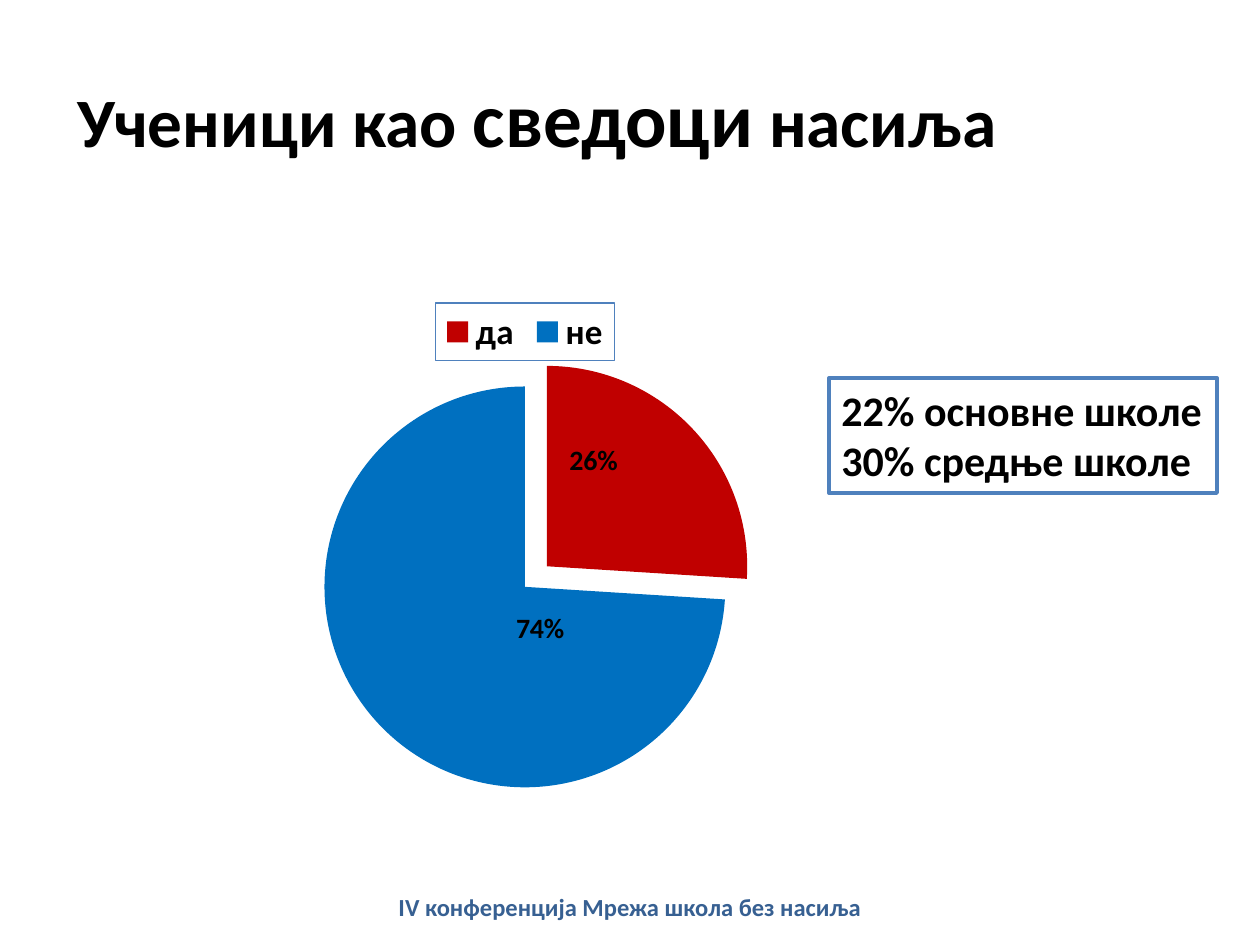
from dataclasses import dataclass

from lxml.etree import fromstring
from pptx import Presentation
from pptx.chart.data import CategoryChartData
from pptx.dml.color import RGBColor
from pptx.enum.chart import XL_CHART_TYPE, XL_LABEL_POSITION, XL_LEGEND_POSITION
from pptx.enum.shapes import MSO_SHAPE
from pptx.enum.text import MSO_ANCHOR, PP_ALIGN
from pptx.util import Pt

PX = 914400 // 126


@dataclass(frozen=True)
class Theme:
    font: str = "Calibri"
    ink: str = "000000"
    red: str = "C00000"
    blue: str = "0070C0"
    border: str = "4F81BD"
    footer: str = "376092"
    title_size: float = 39.6
    emphasis_size: float = 44.1
    note_size: float = 24
    legend_size: float = 20
    label_size: float = 16
    footer_size: float = 14


THEME = Theme()

# (text, size, outline colour)
TITLE = [
    ("Ученици као ", THEME.title_size, None),
    ("сведоци", THEME.emphasis_size, THEME.red),
    (" насиља", THEME.title_size, None),
]
NOTES = ["22% основне школе", "30% средње школе"]
FOOTER = "IV конференција Мрежа школа без насиља"
# (answer, share, colour, label shift as fractions of the chart)
ANSWERS = [
    ("да", 0.26, THEME.red, (-0.03, -0.07)),
    ("не", 0.74, THEME.blue, (0.1, -0.05)),
]
EXPLOSION = 15

# left, top, width, height in px
TITLE_BOX = (54, 38, 966, 157)
CHART_BOX = (84, 294, 882, 514)
PLOT_BOX = (320, 388, 402, 402)
NOTE_BOX = (829, 378, 388, 115)
FOOTER_BOX = (0, 892, 1260, 50)

CHART_NS = "http://schemas.openxmlformats.org/drawingml/2006/chart"
DRAW_NS = "http://schemas.openxmlformats.org/drawingml/2006/main"


def emu(box):
    return [length * PX for length in box]


def element(xml):
    """Parse an element, declaring the c: and a: prefixes on its root."""
    name, rest = xml.split(">", 1)
    return fromstring(f'{name} xmlns:c="{CHART_NS}" xmlns:a="{DRAW_NS}">{rest}')


def style(font, size, color=THEME.ink):
    font.name = THEME.font
    font.size = Pt(size)
    font.bold = True
    font.color.rgb = RGBColor.from_string(color)


def layout(**values):
    parts = "".join(f'<c:{key} val="{value:.2f}"/>' for key, value in values.items())
    target = '<c:layoutTarget val="inner"/>' if "w" in values else ""
    modes = '<c:xMode val="edge"/><c:yMode val="edge"/>' if target else ""
    return element(
        f"<c:layout><c:manualLayout>{target}{modes}{parts}</c:manualLayout></c:layout>"
    )


def add_title(slide):
    frame = slide.shapes.add_textbox(*emu(TITLE_BOX)).text_frame
    frame.word_wrap = True
    frame.vertical_anchor = MSO_ANCHOR.MIDDLE
    paragraph = frame.paragraphs[0]
    paragraph.alignment = PP_ALIGN.CENTER
    for text, size, outline in TITLE:
        run = paragraph.add_run()
        run.text = text
        style(run.font, size)
        if outline:
            run.font._element.insert(0, element(
                f'<a:ln w="{Pt(0.75)}"><a:solidFill><a:srgbClr val="{outline}"/>'
                "</a:solidFill></a:ln>"
            ))


def add_pie(slide):
    data = CategoryChartData(number_format="0%")
    data.categories = [answer[0] for answer in ANSWERS]
    data.add_series("Series 1", [answer[1] for answer in ANSWERS])
    chart = slide.shapes.add_chart(XL_CHART_TYPE.PIE, *emu(CHART_BOX), data).chart
    chart.has_title = False
    chart.font.name = THEME.font

    chart.has_legend = True
    legend = chart.legend
    legend.position = XL_LEGEND_POSITION.TOP
    legend.include_in_layout = False
    style(legend.font, THEME.legend_size)
    legend._element.find(f"{{{CHART_NS}}}txPr").addprevious(element(
        f'<c:spPr><a:ln w="9525"><a:solidFill><a:srgbClr val="{THEME.border}"/>'
        "</a:solidFill></a:ln></c:spPr>"
    ))

    plot_area = chart._chartSpace.chart.plotArea
    for old in plot_area.findall(f"{{{CHART_NS}}}layout"):
        plot_area.remove(old)
    left, top, width, height = CHART_BOX
    plot_left, plot_top, plot_width, plot_height = PLOT_BOX
    plot_area.insert(0, layout(
        x=(plot_left - left) / width, y=(plot_top - top) / height,
        w=plot_width / width, h=plot_height / height,
    ))

    plot = chart.plots[0]
    plot.vary_by_categories = True
    series = plot.series[0]
    for index, (_, _, color, (shift_x, shift_y)) in enumerate(ANSWERS):
        point = series.points[index]
        point.format.fill.solid()
        point.format.fill.fore_color.rgb = RGBColor.from_string(color)
        label = point.data_label
        style(label.font, THEME.label_size)
        label.position = XL_LABEL_POSITION.CENTER
        label_element = series._element.dLbls.dLbl_lst[index]
        label_element.insert(1, layout(x=shift_x, y=shift_y))

    first_point = series._element.find(f"{{{CHART_NS}}}dPt")
    first_point.find(f"{{{CHART_NS}}}spPr").addprevious(
        element(f'<c:explosion><!-- --></c:explosion>'))
    explosion = first_point.find(f"{{{CHART_NS}}}explosion")
    explosion.clear()
    explosion.set("val", str(EXPLOSION))


def add_notes(slide):
    shape = slide.shapes.add_shape(MSO_SHAPE.RECTANGLE, *emu(NOTE_BOX))
    shape.shadow.inherit = False
    shape.fill.background()
    shape.line.color.rgb = RGBColor.from_string(THEME.border)
    shape.line.width = Pt(2.25)
    frame = shape.text_frame
    frame.word_wrap = False
    frame.vertical_anchor = MSO_ANCHOR.TOP
    frame.text = "\n".join(NOTES)
    for paragraph in frame.paragraphs:
        paragraph.alignment = PP_ALIGN.LEFT
        style(paragraph.font, THEME.note_size)


def add_footer(slide):
    frame = slide.shapes.add_textbox(*emu(FOOTER_BOX)).text_frame
    frame.word_wrap = True
    frame.margin_top = frame.margin_bottom = 0
    paragraph = frame.paragraphs[0]
    paragraph.text = FOOTER
    paragraph.alignment = PP_ALIGN.CENTER
    style(paragraph.font, THEME.footer_size, THEME.footer)


def main():
    presentation = Presentation()
    presentation.slide_width, presentation.slide_height = 1260 * PX, 945 * PX
    slide = presentation.slides.add_slide(presentation.slide_layouts[6])
    add_title(slide)
    add_pie(slide)
    add_notes(slide)
    add_footer(slide)
    presentation.save("out.pptx")


if __name__ == "__main__":
    main()
